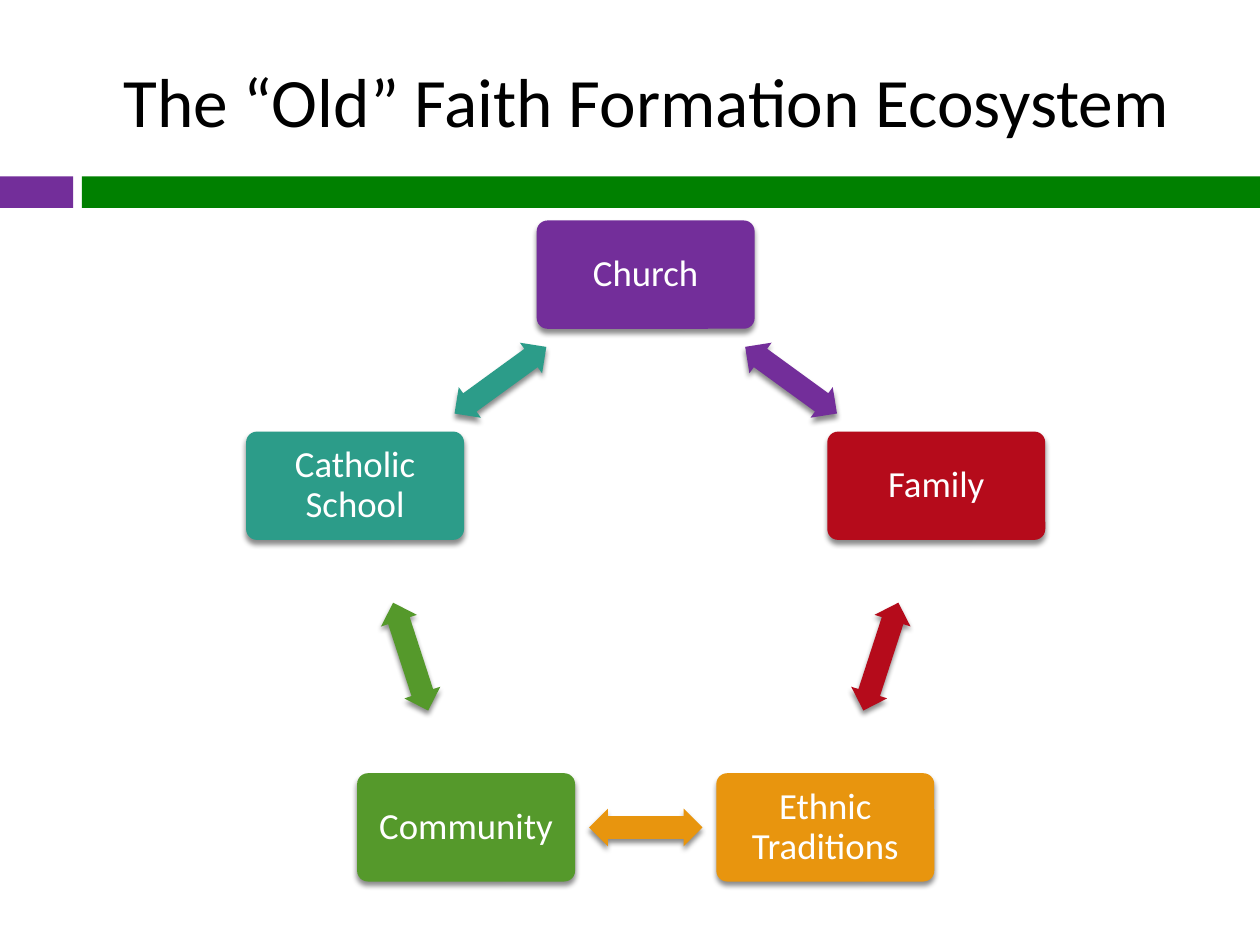
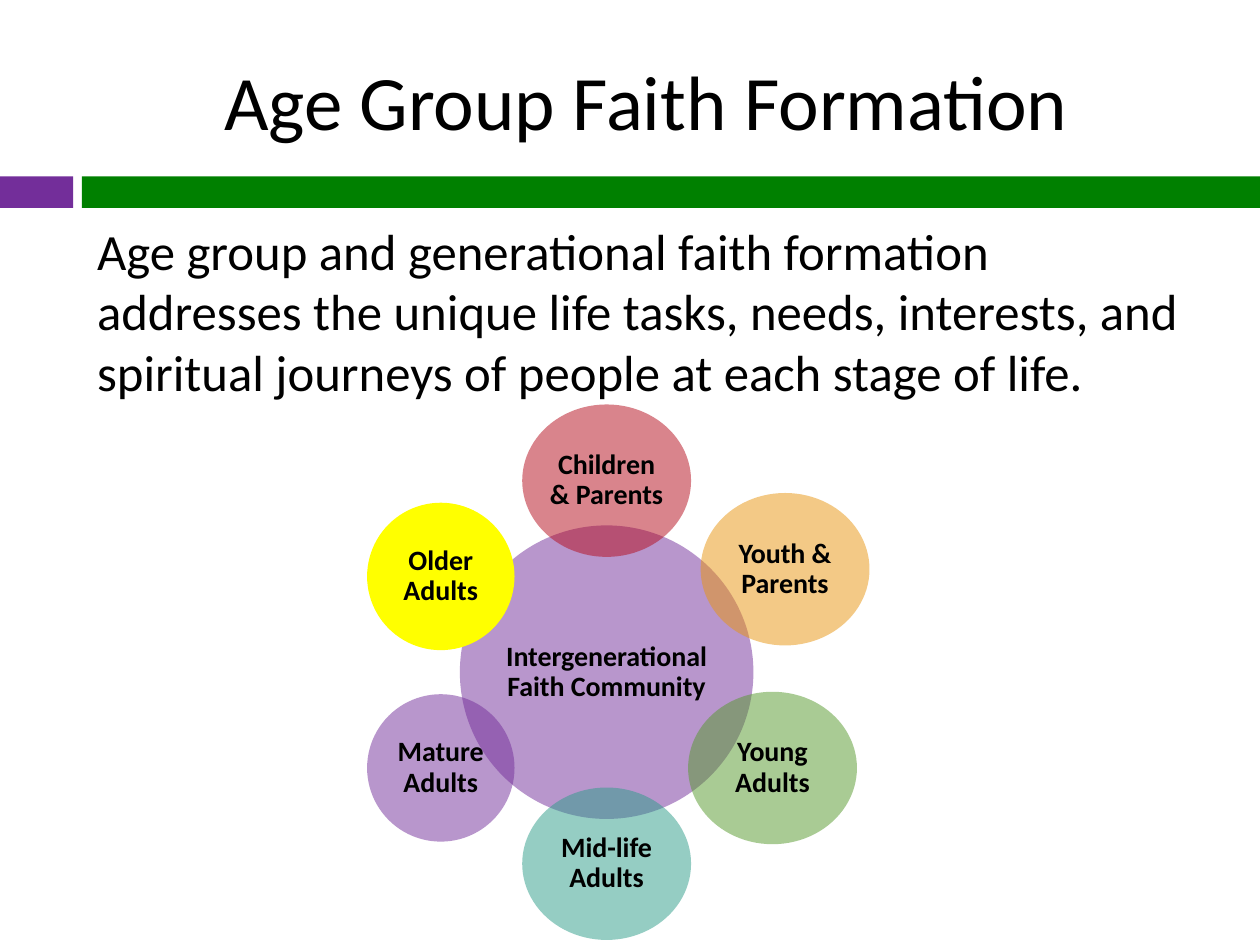
"""Builds two slides on faith formation: a five-part cycle and a ring of age groups."""
from dataclasses import dataclass
from math import cos, pi, radians, sin

from lxml.etree import SubElement
from pptx import Presentation
from pptx.dml.color import RGBColor
from pptx.enum.shapes import MSO_SHAPE as Shape
from pptx.enum.text import MSO_ANCHOR as Anchor, MSO_AUTO_SIZE as AutoSize, PP_ALIGN as Align
from pptx.oxml.ns import qn
from pptx.util import Inches, Pt


@dataclass(frozen=True)
class Theme:
    font: str = "Calibri"
    black: str = "000000"
    white: str = "FFFFFF"
    purple: str = "732E9A"
    band_green: str = "008000"
    red: str = "B50B1B"
    orange: str = "E8950E"
    green: str = "55992B"
    teal: str = "2C9C89"
    yellow: str = "FFFF00"
    long_title_size: float = 39.6
    title_size: float = 44
    body_size: float = 29
    node_size: float = 21
    bubble_size: float = 16


class SlideBuilder:
    columns, rows = 100, 75

    def __init__(self, theme):
        self.theme = theme
        self.deck = Presentation()
        self.deck.slide_width, self.deck.slide_height = Inches(10), Inches(7.5)
        self.slide = None

    def grid(self, left, top, width, height):
        across = self.deck.slide_width / self.columns
        down = self.deck.slide_height / self.rows
        return [int(left * across), int(top * down), int(width * across), int(height * down)]

    def start_slide(self, layout, title, size):
        self.slide = self.deck.slides.add_slide(self.deck.slide_layouts[layout])
        self.shape(Shape.RECTANGLE, (0, 14, 5.8, 2.5), self.theme.purple)
        self.shape(Shape.RECTANGLE, (6.5, 14, 93.5, 2.5), self.theme.band_green)
        heading = self.slide.shapes.title
        self.place(heading, (6.7, 2.5, 89.2, 10.8))
        self.set_text(heading.text_frame, title, size, self.theme.black)

    def place(self, holder, area):
        holder.left, holder.top, holder.width, holder.height = self.grid(*area)

    def set_text(self, frame, text, size, color, bold=False, align=Align.CENTER,
                 anchor=Anchor.MIDDLE, line_spacing=None):
        frame.word_wrap = True
        frame.auto_size = AutoSize.NONE
        frame.vertical_anchor = anchor
        para = frame.paragraphs[0]
        para.alignment = align
        para.space_before = Pt(0)
        if line_spacing:
            para.line_spacing = line_spacing
        span = para.add_run()
        span.text = text
        span.font.name = self.theme.font
        span.font.size = Pt(size)
        span.font.bold = bold
        span.font.color.rgb = RGBColor.from_string(color)

    def body(self, text, area):
        holder = self.slide.placeholders[1]
        self.place(holder, area)
        properties = holder.text_frame.paragraphs[0]._p.get_or_add_pPr()
        properties.set("marL", "0")
        properties.set("indent", "0")
        SubElement(properties, qn("a:buNone"))
        self.set_text(holder.text_frame, text, self.theme.body_size, self.theme.black,
                      align=Align.LEFT, anchor=Anchor.TOP)

    def shape(self, kind, area, color, adjustments=(), opacity=100):
        shape = self.slide.shapes.add_shape(kind, *self.grid(*area))
        shape.shadow.inherit = False
        shape.fill.solid()
        shape.fill.fore_color.rgb = RGBColor.from_string(color)
        shape.line.fill.background()
        for index, value in enumerate(adjustments):
            shape.adjustments[index] = value
        if opacity < 100:
            fill = shape._element.spPr.find(qn("a:solidFill"))
            SubElement(fill[0], qn("a:alpha"), val=str(opacity * 1000))
        return shape

    def centred(self, kind, center, size, color, **options):
        (x, y), (width, height) = center, size
        return self.shape(kind, (x - width / 2, y - height / 2, width, height), color, **options)

    def cast_shadow(self, shape):
        effects = shape._element.spPr.find(qn("a:effectLst"))
        shadow = SubElement(effects, qn("a:outerShdw"), blurRad=str(int(Pt(3))),
                            dist=str(int(Pt(2.4))), dir="5400000", rotWithShape="0")
        tint = SubElement(shadow, qn("a:srgbClr"), val=self.theme.black)
        SubElement(tint, qn("a:alpha"), val="45000")

    def label(self, shape, text, size, color, margin, bold=False):
        frame = shape.text_frame
        frame.margin_left = frame.margin_right = Inches(margin)
        frame.margin_top = frame.margin_bottom = Inches(margin)
        self.set_text(frame, text, size, color, bold=bold, line_spacing=0.9)

    def node(self, text, center, color):
        box = self.centred(Shape.ROUNDED_RECTANGLE, center, (17.3, 8.6), color, adjustments=[0.1])
        self.cast_shadow(box)
        self.label(box, text, self.theme.node_size, self.theme.white, 0.09)

    def double_arrow(self, center, angle, color):
        arrow = self.centred(Shape.LEFT_RIGHT_ARROW, center, (9, 3), color,
                             adjustments=[0.6, 0.5])
        arrow.rotation = angle
        self.cast_shadow(arrow)

    def bubble(self, text, center, size, color, opacity=50):
        circle = self.centred(Shape.OVAL, center, size, color, opacity=opacity)
        self.label(circle, text, self.theme.bubble_size, self.theme.black, 0.02, bold=True)


def on_ring(center, radius, angle):
    turn = radians(angle)
    return center[0] + radius * sin(turn), center[1] - radius * cos(turn)


def old_ecosystem(builder):
    theme = builder.theme
    builder.start_slide(5, "The “Old” Faith Formation Ecosystem", theme.long_title_size)
    partners = [
        ("Church", theme.purple),
        ("Family", theme.red),
        ("Ethnic Traditions", theme.orange),
        ("Community", theme.green),
        ("Catholic School", theme.teal),
    ]
    center, radius, step = (51.25, 46.05), 24.25, 360 / len(partners)
    for index, (name, color) in enumerate(partners):
        angle = index * step
        builder.node(name, on_ring(center, radius, angle), color)
        halfway = angle + step / 2
        middle = on_ring(center, radius * cos(pi / len(partners)), halfway)
        builder.double_arrow(middle, halfway, color)


def age_groups(builder):
    theme = builder.theme
    builder.start_slide(1, "Age Group Faith Formation", theme.title_size)
    builder.body("Age group and generational faith formation addresses the unique life tasks, "
                 "needs, interests, and spiritual journeys of people at each stage of life.",
                 (6.7, 16.9, 89.2, 17.6))
    center, orbit, wide, small = (48.15, 53.35), 15.2, (13.4, 12.1), (11.7, 11.7)
    builder.bubble("Intergenerational Faith Community", center, (23.3, 23.3), theme.purple)
    groups = [
        ("Children & Parents", wide, orbit, theme.red, 50),
        ("Youth & Parents", wide, 16.35, theme.orange, 50),
        ("Young Adults", wide, orbit, theme.green, 50),
        ("Mid-life Adults", wide, orbit, theme.teal, 50),
        ("Mature Adults", small, orbit, theme.purple, 50),
        ("Older Adults", small, orbit, theme.yellow, 100),
    ]
    for index, (name, size, radius, color, opacity) in enumerate(groups):
        place = on_ring(center, radius, index * 360 / len(groups))
        builder.bubble(name, place, size, color, opacity)


def main():
    builder = SlideBuilder(Theme())
    old_ecosystem(builder)
    age_groups(builder)
    builder.deck.save("out.pptx")


if __name__ == "__main__":
    main()
